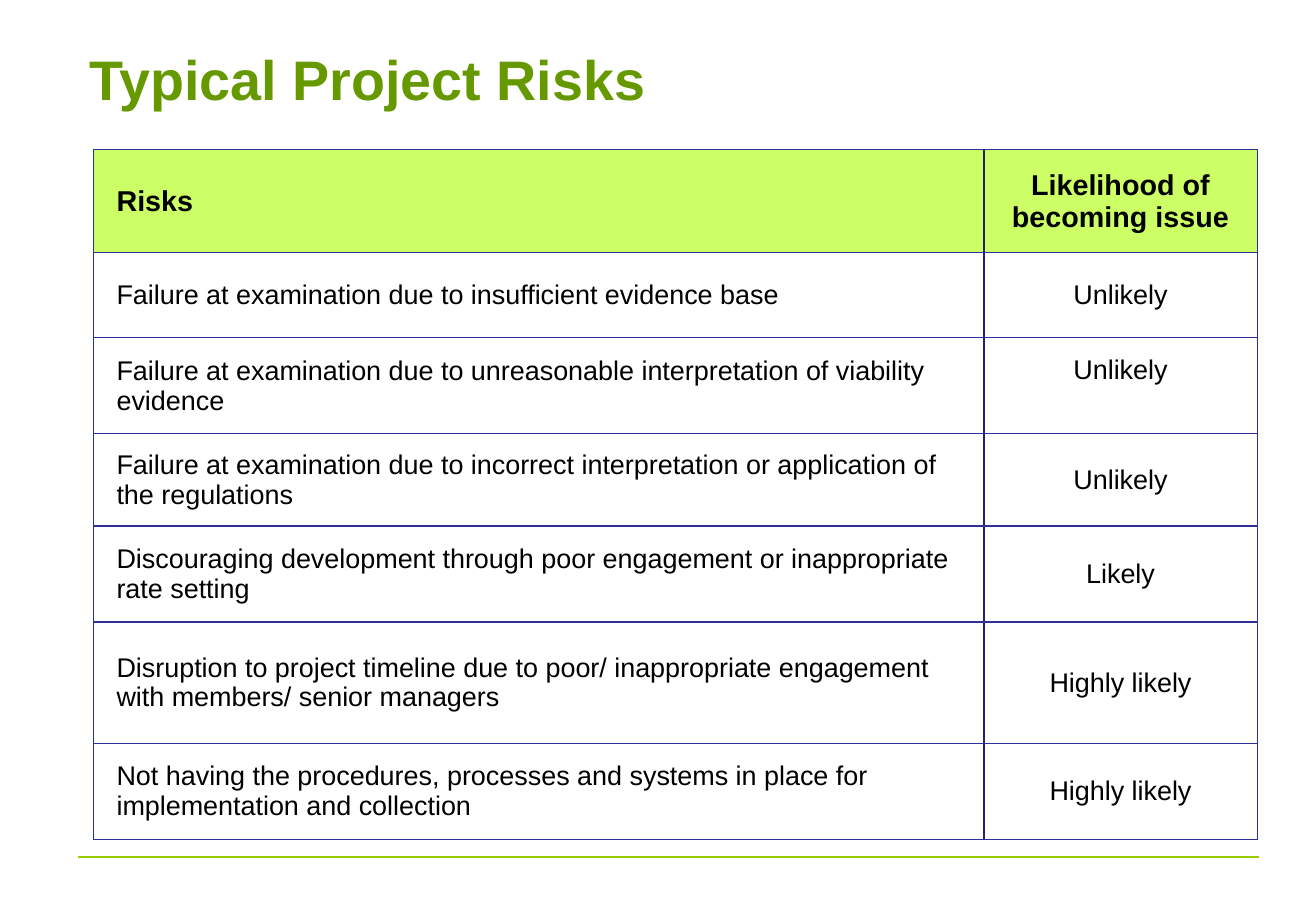
from lxml.etree import SubElement
from pptx import Presentation
from pptx.dml.color import RGBColor
from pptx.enum.shapes import MSO_CONNECTOR
from pptx.enum.text import MSO_ANCHOR, PP_ALIGN
from pptx.oxml.ns import qn
from pptx.util import Pt

GREEN = RGBColor(0x66, 0x99, 0x00)
LIME = RGBColor(0xCC, 0xFF, 0x66)
RULE_GREEN = RGBColor(0x99, 0xCC, 0x00)
BLACK = RGBColor(0x00, 0x00, 0x00)
BORDER_BLUE = RGBColor(0x2F, 0x2F, 0x98)
DIVIDER_BLUE = RGBColor(0x22, 0x22, 0x68)

COLUMN_WIDTHS = (527.8, 162)
ROW_HEIGHTS = (61.2, 50.4, 56.9, 54.7, 56.9, 72, 56.9)
RISKS = (
    ("Risks", "Likelihood of becoming issue"),
    ("Failure at examination due to insufficient evidence base", "Unlikely"),
    ("Failure at examination due to unreasonable interpretation of viability evidence", "Unlikely"),
    ("Failure at examination due to incorrect interpretation or application of the regulations", "Unlikely"),
    ("Discouraging development through poor engagement or inappropriate rate setting", "Likely"),
    ("Disruption to project timeline due to poor/ inappropriate engagement with members/ senior managers",
     "Highly likely"),
    ("Not having the procedures, processes and systems in place for implementation and collection",
     "Highly likely"),
)


class RiskPage:
    """Holds the style and the current slide, and draws each kind of element."""

    font_name = "Arial"

    def __init__(self, deck):
        self.page = deck.slides.add_slide(deck.slide_layouts[5])

    def style(self, para, size, color, bold, align):
        para.alignment = align
        para.font.name = self.font_name
        para.font.size = Pt(size)
        para.font.bold = bold
        para.font.color.rgb = color

    def title(self, text, left, top, width, height):
        box = self.page.shapes.title
        box.left, box.top, box.width, box.height = Pt(left), Pt(top), Pt(width), Pt(height)
        box.text_frame.text = text
        box.text_frame.vertical_anchor = MSO_ANCHOR.MIDDLE
        self.style(box.text_frame.paragraphs[0], 33, GREEN, True, PP_ALIGN.LEFT)

    def rule(self, left, right, y):
        line = self.page.shapes.add_connector(MSO_CONNECTOR.STRAIGHT, Pt(left), Pt(y), Pt(right), Pt(y))
        line.line.color.rgb = RULE_GREEN
        line.line.width = Pt(0.75)
        SubElement(line._element.spPr, qn("a:effectLst"))

    def borders(self, cell, divider):
        properties = cell._tc.get_or_add_tcPr()
        for position, side in enumerate(("lnL", "lnR", "lnT", "lnB")):
            color, width = (DIVIDER_BLUE, 1) if side == divider else (BORDER_BLUE, 0.75)
            line = SubElement(properties, qn(f"a:{side}"), w=str(Pt(width)))
            properties.insert(position, line)
            fill = SubElement(line, qn("a:solidFill"))
            SubElement(fill, qn("a:srgbClr"), val=str(color))

    def cell(self, cell, text, is_header, is_risk):
        cell.text = text
        cell.vertical_anchor = MSO_ANCHOR.MIDDLE
        cell.margin_left = Pt(13.7 if is_risk else 6.5)
        cell.margin_right = Pt(6.5)
        cell.margin_top = cell.margin_bottom = Pt(3.6)
        if is_header:
            cell.fill.solid()
            cell.fill.fore_color.rgb = LIME
        else:
            cell.fill.background()
        align = PP_ALIGN.LEFT if is_risk else PP_ALIGN.CENTER
        self.style(cell.text_frame.paragraphs[0], 17 if is_header else 16, BLACK, is_header, align)
        self.borders(cell, "lnR" if is_risk else "lnL")

    def table(self, rows, left, top):
        frame = self.page.shapes.add_table(
            len(rows), len(COLUMN_WIDTHS), Pt(left), Pt(top), Pt(sum(COLUMN_WIDTHS)), Pt(sum(ROW_HEIGHTS)))
        table = frame.table
        table.first_row = table.horz_banding = False
        for column, width in zip(table.columns, COLUMN_WIDTHS):
            column.width = Pt(width)
        for row, height in zip(table.rows, ROW_HEIGHTS):
            row.height = Pt(height)
        for row_index, texts in enumerate(rows):
            for column_index, text in enumerate(texts):
                self.cell(table.cell(row_index, column_index), text, row_index == 0, column_index == 0)
        return table


def main():
    deck = Presentation()
    deck.slide_width, deck.slide_height = Pt(780), Pt(540)
    risk_page = RiskPage(deck)
    risk_page.rule(46, 746, 508)
    risk_page.title("Typical Project Risks", 46, 21.6, 702, 49.7)
    table = risk_page.table(RISKS, 55.4, 88.6)
    viability_likelihood = table.cell(2, 1)
    viability_likelihood.vertical_anchor = MSO_ANCHOR.TOP
    viability_likelihood.margin_top = Pt(10.5)
    deck.save("out.pptx")


if __name__ == "__main__":
    main()
